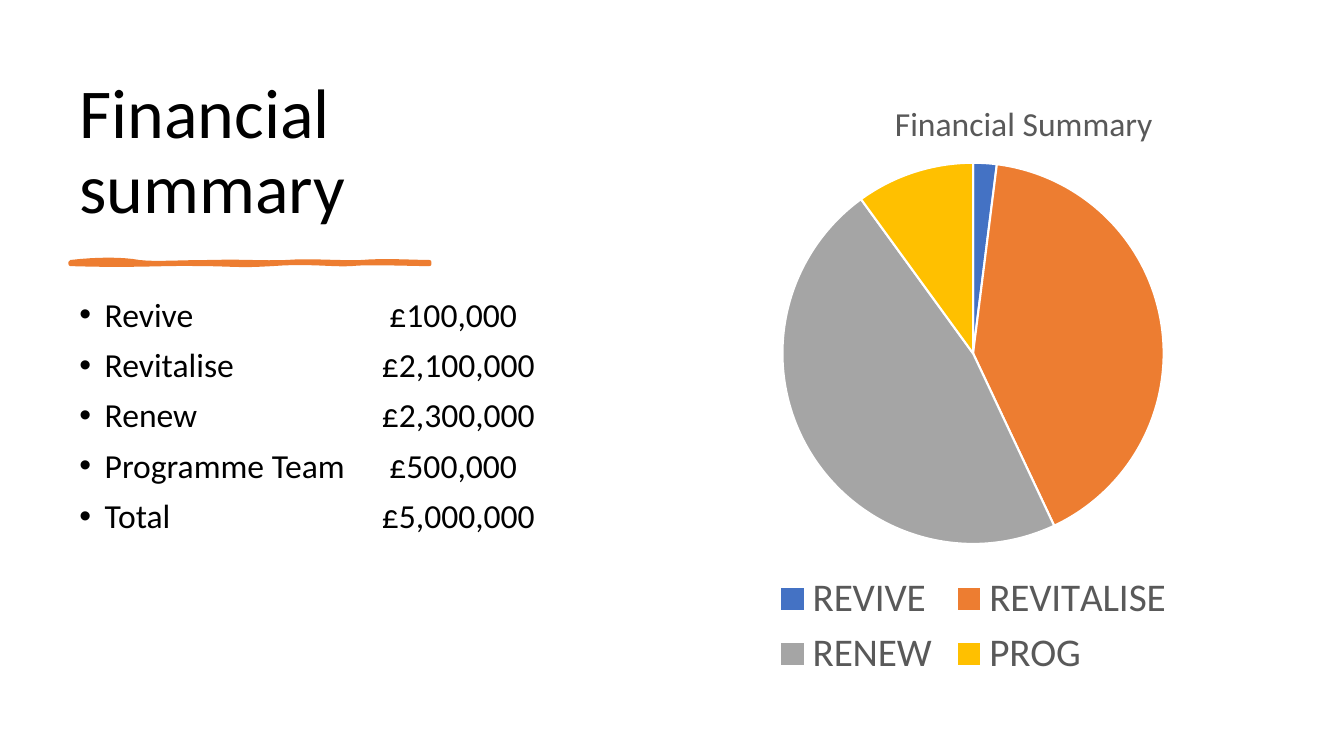
import pptx
import pptx.chart.data
import pptx.dml.color
import pptx.enum.chart
import pptx.enum.text
import pptx.oxml
import pptx.oxml.ns
import pptx.util

FONT = "Calibri"
COLORS = {"text": "000000", "chart_text": "595959", "underline": "ED7D31", "border": "FFFFFF"}
TITLE = "Financial summary"
BUDGET_LINES = [
    ("Revive", " £100,000"),
    ("Revitalise", "£2,100,000"),
    ("Renew", "£2,300,000"),
    ("Programme Team", " £500,000"),
    ("Total", "£5,000,000"),
]
CHART_TITLE = "Financial Summary"
SHARES = [
    ("REVIVE", 2, "4472C4"),
    ("REVITALISE", 41, "ED7D31"),
    ("RENEW", 47, "A5A5A5"),
    ("PROG", 10, "FFC000"),
]
TITLE_BOX = (49.7, 50.4, 379.4, 116.6)
BUDGET_BOX = (49.7, 209.5, 493.2, 279.4)
CHART_BOX = (480.2, 50.4, 429.8, 439.2)
AMOUNT_TAB = 216
UNDERLINE_START = (50.4, 187.2)
UNDERLINE_CURVES = [
    ((69.8, 185), (87.1, 185), (99.4, 187.2)),
    ((111.6, 188.6), (127.4, 187.2), (150.5, 187.2)),
    ((173.5, 186.5), (187.2, 187.9), (204.5, 187.2)),
    ((221.8, 185.8), (244.1, 187.9), (258.5, 187.2)),
    ((272.9, 185.8), (296.6, 187.2), (306.7, 187.2)),
    ((306.7, 187.2), (306.7, 187.9), (306.7, 188.6)),
    ((293.8, 188.6), (262.1, 187.2), (250.6, 188.6)),
    ((239, 189.4), (218.9, 186.5), (194.4, 188.6)),
    ((169.2, 190.1), (166.3, 188.6), (143.3, 188.6)),
    ((119.5, 187.9), (95, 190.1), (50.4, 188.6)),
]
CURVE_STEPS = 8


def points(values):
    return [pptx.util.Pt(value) for value in values]


def rgb(value):
    return pptx.dml.color.RGBColor.from_string(value)


def style(font, size, color):
    font.name = FONT
    font.size = pptx.util.Pt(size)
    font.bold = False
    font.color.rgb = rgb(color)


def add_text(slide, box, lines, size):
    frame = slide.shapes.add_textbox(*points(box)).text_frame
    frame.word_wrap = True
    for index, line in enumerate(lines):
        paragraph = frame.paragraphs[0] if index == 0 else frame.add_paragraph()
        paragraph.text = line
        paragraph.line_spacing = 0.9
        paragraph.space_before = pptx.util.Pt(10 if index else 0)
    return frame


def add_title(slide):
    frame = add_text(slide, TITLE_BOX, [TITLE], 50)
    frame.vertical_anchor = pptx.enum.text.MSO_ANCHOR.BOTTOM
    style(frame.paragraphs[0].font, 50, COLORS["text"])


def add_budget(slide):
    frame = add_text(slide, BUDGET_BOX, ["\t".join(line) for line in BUDGET_LINES], 24)
    namespace = pptx.oxml.ns.nsdecls("a")
    for paragraph in frame.paragraphs:
        properties = paragraph._p.get_or_add_pPr()
        properties.set("marL", str(pptx.util.Pt(18)))
        properties.set("indent", str(pptx.util.Pt(-18)))
        for markup in (
            f'<a:buFont {namespace} typeface="Arial"/>',
            f'<a:buChar {namespace} char="•"/>',
            f'<a:tabLst {namespace}><a:tab pos="{pptx.util.Pt(AMOUNT_TAB)}" algn="l"/></a:tabLst>',
        ):
            properties.append(pptx.oxml.parse_xml(markup))
        style(paragraph.font, 24, COLORS["text"])


def bezier(start, first, second, end, t):
    weights = ((1 - t) ** 3, 3 * t * (1 - t) ** 2, 3 * t**2 * (1 - t), t**3)
    corners = (start, first, second, end)
    return points(sum(w * corner[axis] for w, corner in zip(weights, corners)) for axis in (0, 1))


def add_underline(slide):
    vertices = []
    start = UNDERLINE_START
    for curve in UNDERLINE_CURVES:
        vertices += [bezier(start, *curve, step / CURVE_STEPS) for step in range(1, CURVE_STEPS + 1)]
        start = curve[-1]
    builder = slide.shapes.build_freeform(*points(UNDERLINE_START))
    builder.add_line_segments(vertices, close=True)
    shape = builder.convert_to_shape()
    shape.shadow.inherit = False
    shape.fill.solid()
    shape.fill.fore_color.rgb = rgb(COLORS["underline"])
    shape.line.color.rgb = rgb(COLORS["underline"])
    shape.line.width = pptx.util.Pt(3)


def set_layout(parent, position, **values):
    for old in parent.findall(pptx.oxml.ns.qn("c:layout")):
        parent.remove(old)
    fields = "".join(f'<c:{name} val="{value}"/>' for name, value in values.items())
    parent.insert(position, pptx.oxml.parse_xml(
        f'<c:layout {pptx.oxml.ns.nsdecls("c")}><c:manualLayout>{fields}</c:manualLayout></c:layout>'))


def add_pie(slide):
    data = pptx.chart.data.CategoryChartData()
    data.categories = [name for name, share, color in SHARES]
    data.add_series("Series 1", [share for name, share, color in SHARES])
    chart = slide.shapes.add_chart(
        pptx.enum.chart.XL_CHART_TYPE.PIE, *points(CHART_BOX), data).chart
    style(chart.font, 10, COLORS["text"])

    chart.has_title = True
    title = chart.chart_title
    title.text_frame.text = CHART_TITLE
    style(title.text_frame.paragraphs[0].font, 24, COLORS["chart_text"])
    set_layout(title._element, 1, xMode="edge", yMode="edge", x=0.36, y=0.04)

    chart.has_legend = True
    chart.legend.position = pptx.enum.chart.XL_LEGEND_POSITION.BOTTOM
    chart.legend.include_in_layout = False
    style(chart.legend.font, 28, COLORS["chart_text"])

    plot = chart.plots[0]
    plot.vary_by_categories = True
    set_layout(plot._element.getparent(), 0, layoutTarget="inner", xMode="edge", yMode="edge",
               x=0.18, y=0.15, w=0.64, h=0.62)
    for index, (name, share, color) in enumerate(SHARES):
        wedge = plot.series[0].points[index].format
        wedge.fill.solid()
        wedge.fill.fore_color.rgb = rgb(color)
        wedge.line.color.rgb = rgb(COLORS["border"])
        wedge.line.width = pptx.util.Pt(1.5)


def main():
    presentation = pptx.Presentation()
    presentation.slide_width, presentation.slide_height = points((960, 540))
    slide = presentation.slides.add_slide(presentation.slide_layouts[6])
    add_title(slide)
    add_underline(slide)
    add_budget(slide)
    add_pie(slide)
    presentation.save("out.pptx")


if __name__ == "__main__":
    main()
